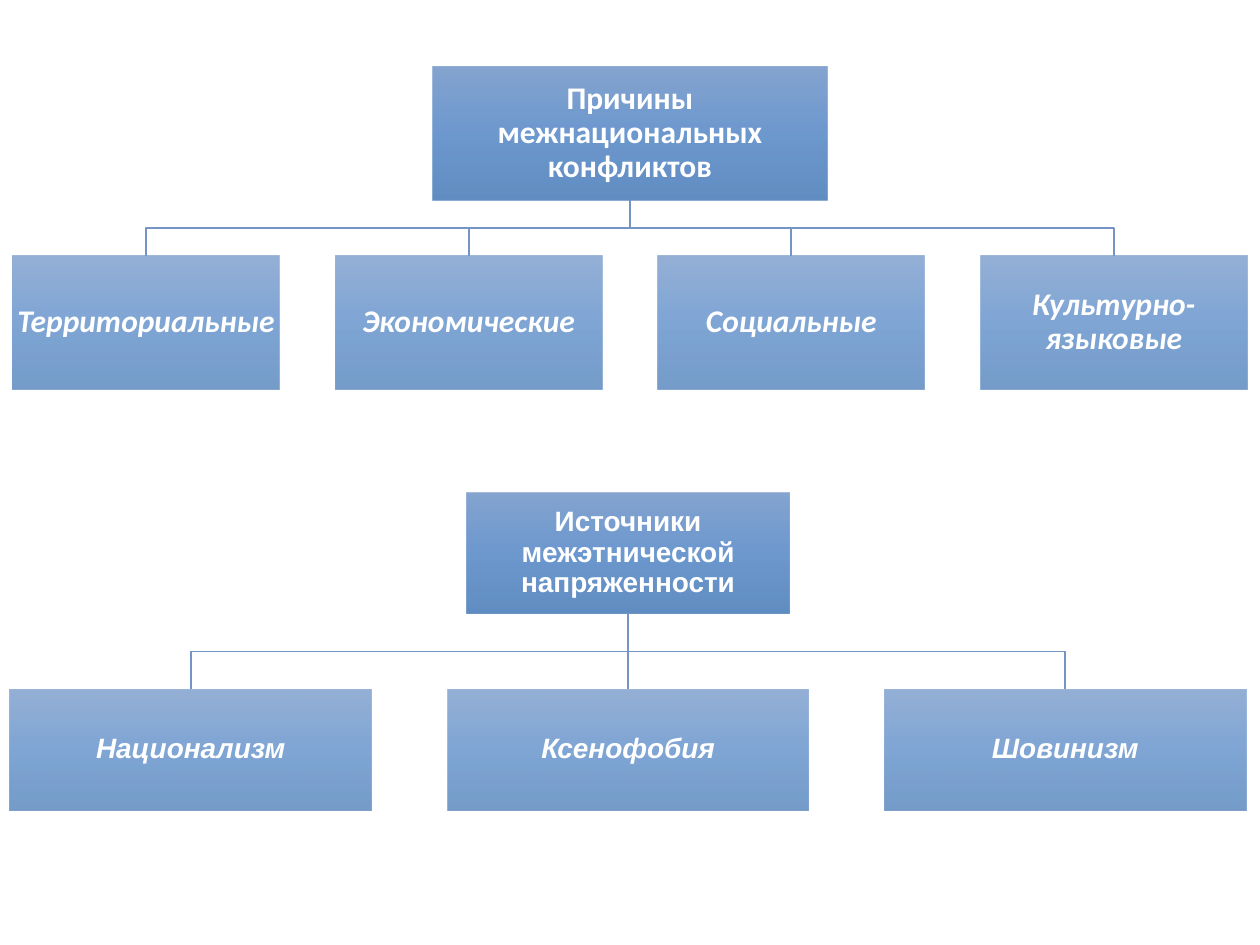
from lxml.etree import SubElement
from pptx import Presentation
from pptx.dml.color import RGBColor
from pptx.enum.shapes import MSO_CONNECTOR, MSO_SHAPE
from pptx.enum.text import MSO_ANCHOR, PP_ALIGN
from pptx.oxml.ns import qn
from pptx.util import Inches, Pt

COLORS = {"top": "688FC5", "middle": "4A80C3", "bottom": "3B72B3",
          "line": "7394C5", "text": "FFFFFF"}
STOPS = [(0, "top"), (50, "middle"), (100, "bottom")]


def color(name):
    return RGBColor.from_string(COLORS[name])


def fill_gradient(shape, opacity):
    """Fill from top to bottom; opacity is in percent."""
    shape.fill.gradient()
    shape.fill.gradient_angle = 270
    stops = shape._element.spPr.find(qn("a:gradFill")).find(qn("a:gsLst"))
    for stop in list(stops):
        stops.remove(stop)
    for position, name in STOPS:
        stop = SubElement(stops, qn("a:gs"), pos=str(position * 1000))
        value = SubElement(stop, qn("a:srgbClr"), val=COLORS[name])
        SubElement(value, qn("a:alpha"), val=str(opacity * 1000))


def add_node(slide, left, top, width, height, text, font_name, size, opacity, italic):
    shape = slide.shapes.add_shape(MSO_SHAPE.RECTANGLE, left, top, width, height)
    shape.shadow.inherit = False
    shape.line.fill.background()
    fill_gradient(shape, opacity)
    frame = shape.text_frame
    frame.word_wrap = True
    frame.vertical_anchor = MSO_ANCHOR.MIDDLE
    frame.margin_left = frame.margin_right = Inches(0.01)
    frame.margin_top = frame.margin_bottom = Inches(0.01)
    frame.text = text
    paragraph = frame.paragraphs[0]
    paragraph.alignment = PP_ALIGN.CENTER
    paragraph.line_spacing = 0.9
    font = paragraph.runs[0].font
    font.name, font.size = font_name, Pt(size)
    font.bold, font.italic = True, italic
    font.color.rgb = color("text")
    return shape


def add_link(slide, parent, child):
    """Straight connector to a child below the parent's middle, else an elbow."""
    start_x = parent.left + parent.width // 2
    start_y = parent.top + parent.height
    end_x, end_y = child.left + child.width // 2, child.top
    if abs(end_x - start_x) < Inches(0.01):
        link = slide.shapes.add_connector(
            MSO_CONNECTOR.STRAIGHT, start_x, start_y, end_x, end_y)
        link.begin_connect(parent, 2)
        link.end_connect(child, 0)
        SubElement(link._element.spPr, qn("a:effectLst"))
    else:
        middle_y = (start_y + end_y) // 2
        builder = slide.shapes.build_freeform(start_x, start_y)
        builder.add_line_segments(
            [(start_x, middle_y), (end_x, middle_y), (end_x, end_y)], close=False)
        link = builder.convert_to_shape()
        link.fill.background()
        link.shadow.inherit = False
    link.line.color.rgb = color("line")
    link.line.width = Pt(1)


def add_hierarchy(slide, box, title, title_width, causes, node_height, gap,
                  font_name, size):
    """Title centred at the top of the box, equal cause nodes along its bottom."""
    left, top, width, height = box
    parent = add_node(slide, left + (width - title_width) // 2, top, title_width,
                      node_height, title, font_name, size, 80, False)
    node_width = (width - gap * (len(causes) - 1)) // len(causes)
    for index, cause in enumerate(causes):
        child = add_node(slide, left + index * (node_width + gap),
                         top + height - node_height, node_width, node_height,
                         cause, font_name, size, 70, True)
        add_link(slide, parent, child)


def main():
    presentation = Presentation()
    presentation.slide_width = Inches(10)
    presentation.slide_height = Inches(7.5)
    slide = presentation.slides.add_slide(presentation.slide_layouts[6])
    add_hierarchy(
        slide, (Inches(0.1), Inches(0.53), Inches(9.8), Inches(2.56)),
        "Причины межнациональных конфликтов", Inches(3.13),
        ["Территориальные", "Экономические", "Социальные", "Культурно-языковые"],
        Inches(1.06), Inches(0.44), "Calibri", 18)
    add_hierarchy(
        slide, (Inches(0.08), Inches(3.91), Inches(9.81), Inches(2.52)),
        "Источники межэтнической напряженности", Inches(2.56),
        ["Национализм", "Ксенофобия", "Шовинизм"],
        Inches(0.96), Inches(0.6), "Arial", 16)
    presentation.save("out.pptx")


if __name__ == "__main__":
    main()
